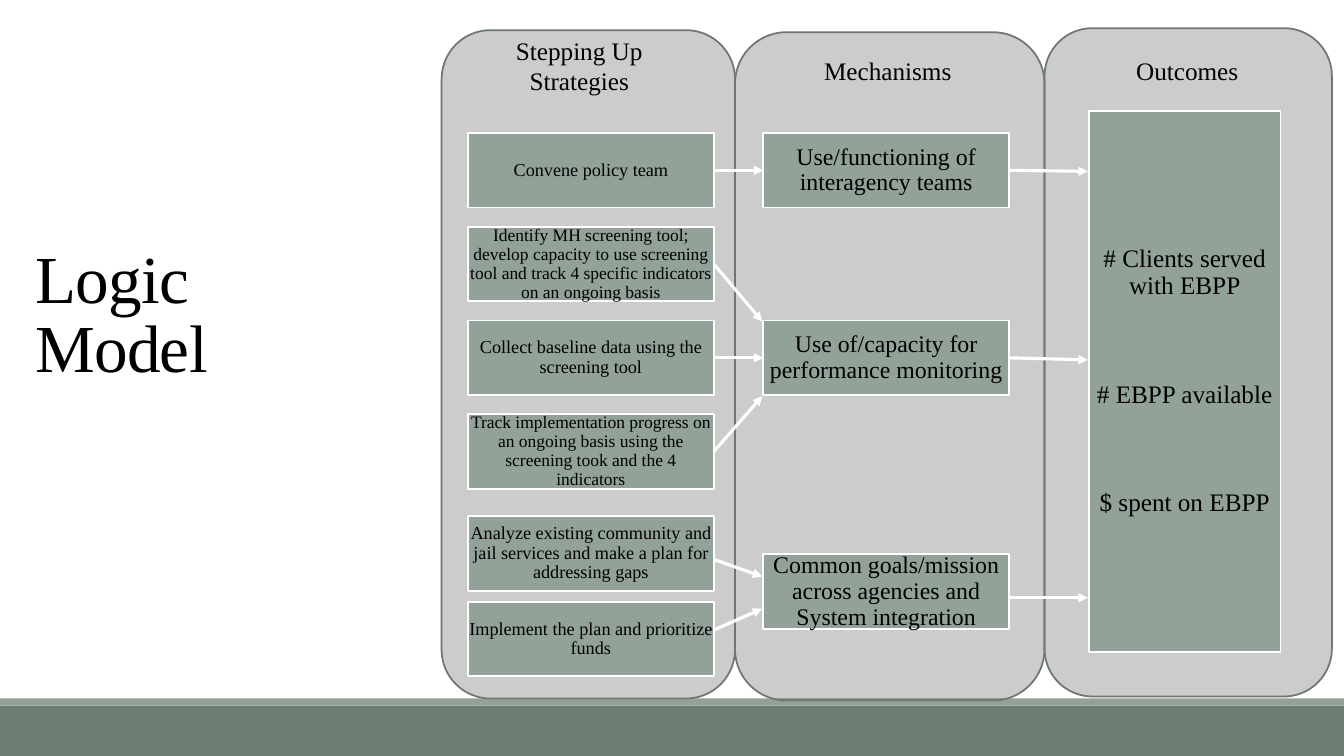
import pptx
import pptx.util
import pptx.dml.color
import pptx.enum.shapes
import pptx.enum.text
import pptx.oxml.ns
import lxml.etree
from dataclasses import dataclass

Inches, Pt = pptx.util.Inches, pptx.util.Pt
RGB = pptx.dml.color.RGBColor.from_string
SHAPES = pptx.enum.shapes.MSO_SHAPE
ANCHOR = pptx.enum.text.MSO_ANCHOR
ALIGN = pptx.enum.text.PP_ALIGN


@dataclass(frozen=True)
class Theme:
    font: str = "Times New Roman"
    ink: str = "000000"
    white: str = "FFFFFF"
    sage: str = "93A299"
    footer: str = "6B7D72"
    panel_line: str = "6D7871"
    panel_opacity: int = 20
    title: float = 48
    heading: float = 18
    mechanism: float = 17
    strategy: float = 13
    dense: float = 12.5
    outline: float = 1.25
    arrow: float = 2.25


THEME = Theme()

TITLE = "Logic Model"
# left, top, width, height
FOOTER_BARS = [((0, 7, 13.33, 0.5), THEME.footer), ((0, 6.93, 13.33, 0.07), THEME.sage)]
PANELS = [(10.36, 0.28, 2.85, 6.63), (7.29, 0.32, 3.07, 6.63), (4.38, 0.3, 2.91, 6.63)]
HEADINGS = [
    ("Stepping Up Strategies", (4.64, 0.3, 2.21, 0.71)),
    ("Mechanisms", (7.7, 0.5, 2.21, 0.4)),
    ("Outcomes", (10.67, 0.5, 2.21, 0.4)),
]
BOX_WIDTH, BOX_HEIGHT = 2.44, 0.74
STRATEGY_LEFT, MECHANISM_LEFT = 4.64, 7.57
# text, top, type size
STRATEGIES = [
    ("Convene policy team", 1.32, THEME.strategy),
    ("Identify MH screening tool; develop capacity to use screening tool and track "
     "4 specific indicators on an ongoing basis", 2.25, THEME.dense),
    ("Collect baseline data using the screening tool", 3.18, THEME.strategy),
    ("Track implementation progress on an ongoing basis using the screening took "
     "and the 4 indicators", 4.11, THEME.dense),
    ("Analyze existing community and jail services and make a plan for addressing gaps",
     5.12, THEME.strategy),
    ("Implement the plan and prioritize funds", 5.97, THEME.strategy),
]
MECHANISMS = [
    ("Use/functioning of interagency teams", 1.32),
    ("Use of/capacity for performance monitoring", 3.18),
    ("Common goals/mission across agencies and System integration", 5.5),
]
OUTCOMES = ["# Clients served with EBPP", "# EBPP available", "$ spent on EBPP"]
OUTCOMES_AREA = (10.8, 1.1, 1.9, 5.37)
OUTCOME_GAP = 58
# strategy, mechanism, start height, end height (None: middle of the side)
STRATEGY_ARROWS = [
    (0, 0, None, None),
    (1, 1, None, 3.19),
    (2, 1, None, None),
    (3, 1, None, 3.93),
    (4, 2, 5.55, 5.72),
    (5, 2, 6.25, 6.04),
]
# mechanism, start height, end height
OUTCOME_ARROWS = [(0, None, 1.7), (1, None, 3.57), (2, 5.93, 5.93)]


def add_block(slide, area, fill, line=None, preset=SHAPES.RECTANGLE):
    block = slide.shapes.add_shape(preset, *map(Inches, area))
    block.shadow.inherit = False
    block.fill.solid()
    block.fill.fore_color.rgb = RGB(fill)
    if line:
        block.line.color.rgb = RGB(line)
        block.line.width = Pt(THEME.outline)
    else:
        block.line.fill.background()
    return block


def write(shape, lines, size, align=ALIGN.CENTER, spacing=None, gap=0):
    """Fill a shape with one paragraph per line, gap points apart."""
    frame = shape.text_frame
    frame.word_wrap = True
    frame.text = "\n".join(lines)
    for index, paragraph in enumerate(frame.paragraphs):
        paragraph.alignment = align
        paragraph.line_spacing = spacing
        paragraph.space_before = Pt(gap if index else 0)
        for run in paragraph.runs:
            run.font.name = THEME.font
            run.font.size = Pt(size)
            run.font.color.rgb = RGB(THEME.ink)
    return frame


def add_box(slide, area, lines, size, gap=0):
    box = add_block(slide, area, THEME.sage, THEME.white)
    frame = write(box, lines, size, spacing=0.9, gap=gap)
    frame.vertical_anchor = ANCHOR.MIDDLE
    frame.margin_left = frame.margin_right = Inches(0.01)
    frame.margin_top = frame.margin_bottom = Inches(0.01)
    return box


def add_arrow(slide, source, target, start_y, end_y):
    """Join two boxes, gluing each end that sits at the middle of a side."""
    def height(y, box):
        return box.top + box.height // 2 if y is None else Inches(y)

    arrow = slide.shapes.add_connector(
        pptx.enum.shapes.MSO_CONNECTOR.STRAIGHT,
        source.left + source.width, height(start_y, source),
        target.left - Inches(0.01), height(end_y, target))
    if start_y is None:
        arrow.begin_connect(source, 3)
    if end_y is None:
        arrow.end_connect(target, 1)
    arrow.line.color.rgb = RGB(THEME.white)
    arrow.line.width = Pt(THEME.arrow)
    qn = pptx.oxml.ns.qn
    lxml.etree.SubElement(arrow.line._get_or_add_ln(), qn("a:tailEnd"), type="triangle")
    lxml.etree.SubElement(arrow._element.spPr, qn("a:effectLst"))


def add_panel(slide, area):
    panel = add_block(slide, area, THEME.ink, THEME.panel_line, SHAPES.ROUNDED_RECTANGLE)
    qn = pptx.oxml.ns.qn
    color = panel._element.spPr.find(qn("a:solidFill")).find(qn("a:srgbClr"))
    lxml.etree.SubElement(color, qn("a:alpha"), val=str(THEME.panel_opacity * 1000))


def add_title(slide):
    title = slide.shapes.add_textbox(*map(Inches, (0.25, 2.84, 3.58, 1.04)))
    frame = write(title, [TITLE], THEME.title, ALIGN.LEFT, spacing=0.85)
    frame.vertical_anchor = ANCHOR.BOTTOM
    frame.paragraphs[0].runs[0].font._element.set("spc", "-50")


def main():
    deck = pptx.Presentation()
    deck.slide_width, deck.slide_height = Inches(13.33), Inches(7.5)
    slide = deck.slides.add_slide(deck.slide_layouts[6])

    for area, color in FOOTER_BARS:
        add_block(slide, area, color)
    for area in PANELS:
        add_panel(slide, area)
    add_title(slide)

    outcomes = add_box(slide, OUTCOMES_AREA, OUTCOMES, THEME.heading, OUTCOME_GAP)
    mechanisms = [
        add_box(slide, (MECHANISM_LEFT, top, BOX_WIDTH, BOX_HEIGHT), [text], THEME.mechanism)
        for text, top in MECHANISMS]
    strategies = [
        add_box(slide, (STRATEGY_LEFT, top, BOX_WIDTH, BOX_HEIGHT), [text], size)
        for text, top, size in STRATEGIES]
    for text, area in HEADINGS:
        write(slide.shapes.add_textbox(*map(Inches, area)), [text], THEME.heading)

    for strategy, mechanism, start_y, end_y in STRATEGY_ARROWS:
        add_arrow(slide, strategies[strategy], mechanisms[mechanism], start_y, end_y)
    for mechanism, start_y, end_y in OUTCOME_ARROWS:
        add_arrow(slide, mechanisms[mechanism], outcomes, start_y, end_y)

    deck.save("out.pptx")


if __name__ == "__main__":
    main()
